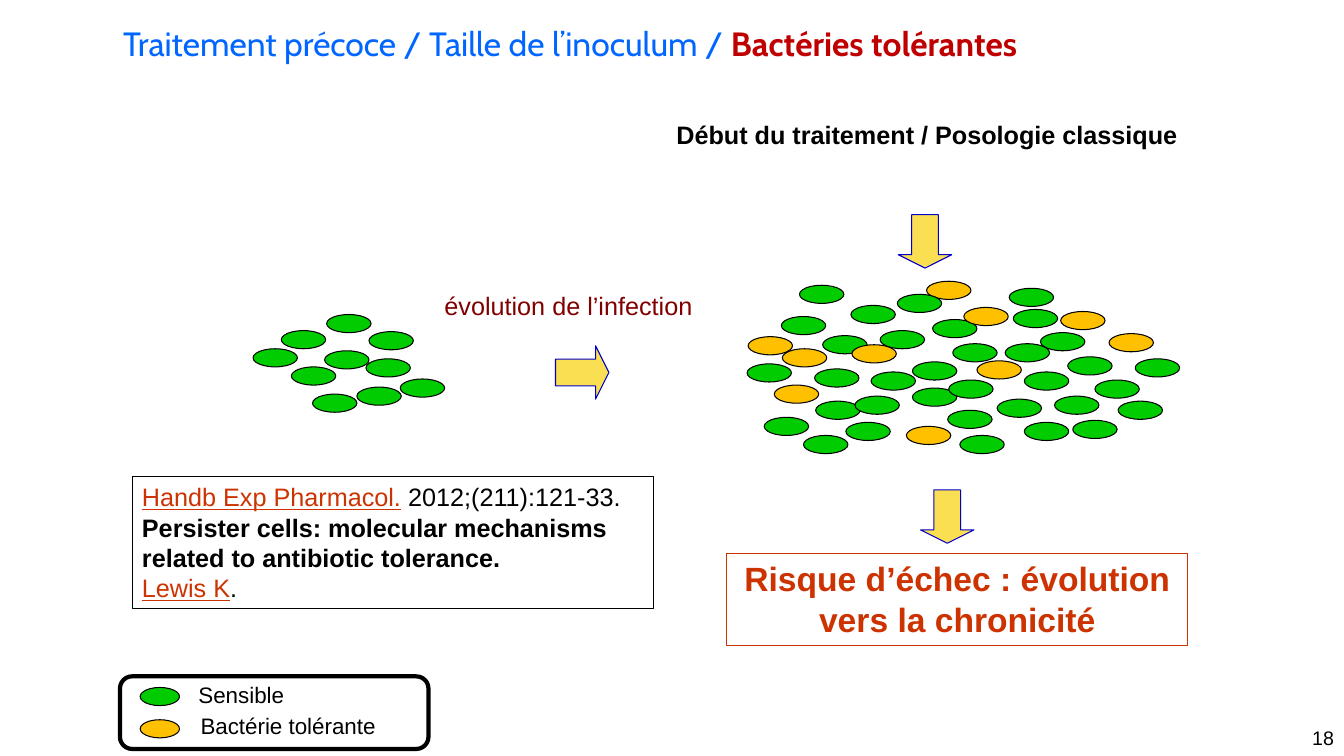
"""Slide on early treatment, inoculum size and tolerant bacteria."""
import pptx
import pptx.util
import pptx.dml.color
import pptx.enum.shapes
import pptx.enum.text

SCALE = 9144
BLACK, RED, MAROON = "000000", "CC3300", "800000"
SHAPES = pptx.enum.shapes.MSO_SHAPE
ALIGN = pptx.enum.text.PP_ALIGN
ANCHOR = pptx.enum.text.MSO_ANCHOR

S, T = "00CC00", "FFC000"
CELL_SIZE = (44, 18)
KEY_SIZE = (39, 18)
INOCULUM = [(251, 346), (322, 348), (289, 364), (310, 391), (324, 312),
            (366, 329), (363, 356), (354, 384), (397, 376), (279, 328)]
COLONY = [
    (844, 303, S), (776, 346, T), (808, 366, S), (809, 398, S), (839, 419, S),
    (775, 314, S), (873, 328, S), (925, 317, S), (797, 432, S), (945, 341, S),
    (905, 385, S), (940, 407, S), (952, 432, S), (741, 361, S), (1005, 307, S),
    (1032, 330, S), (1059, 354, S), (989, 396, S), (1016, 419, S), (758, 414, S),
    (816, 333, S), (1064, 417, S), (1046, 393, S), (845, 342, T), (768, 382, T),
    (969, 358, T), (1086, 377, S), (742, 334, T), (1052, 309, T), (919, 279, T),
    (864, 369, S), (1001, 286, S), (793, 283, S), (1100, 331, T), (1126, 356, S),
    (941, 377, S), (997, 341, S), (890, 292, S), (848, 393, S), (905, 359, S),
    (899, 423, T), (956, 305, T), (1016, 369, S), (1109, 398, S),
]
ARROWS = [(551, 343, 270), (891, 213, 0), (913, 486, 0)]
KEY = [("Sensible", S, (139, 682), (187, 671, 106, 37)),
       ("Bactérie tolérante", T, (139, 714), (189, 702, 202, 37))]

# Runs: text, colour, bold, underlined
TITLE = [[("Traitement précoce / Taille de l’inoculum / ", "0066FF", False, False),
          ("Bactéries tolérantes", "C00000", True, False)]]
START = [[("Début du traitement / Posologie classique", BLACK, True, False)]]
GROWTH = [[("évolution de l’infection", MAROON, False, False)]]
RISK = [[("Risque d’échec : évolution vers la chronicité", RED, True, False)]]
REFERENCE = [
    [("Handb Exp Pharmacol.", RED, False, True),
     (" 2012;(211):121-33.", BLACK, False, False)],
    [("Persister cells: molecular mechanisms related to antibiotic tolerance.",
      BLACK, True, False)],
    [("Lewis K", RED, False, True), (".", BLACK, False, False)],
]
NUMBER = [[("18", BLACK, False, False)]]


def emu(*lengths):
    return [pptx.util.Emu(n * SCALE) for n in lengths]


def rgb(value):
    return pptx.dml.color.RGBColor.from_string(value)


def write(sp, paragraphs, size, align=ALIGN.LEFT, font="Arial",
          anchor=ANCHOR.TOP, wrap=True):
    tf = sp.text_frame
    tf.auto_size = pptx.enum.text.MSO_AUTO_SIZE.NONE
    tf.word_wrap = wrap
    tf.vertical_anchor = anchor
    for i, runs in enumerate(paragraphs):
        p = tf.add_paragraph() if i else tf.paragraphs[0]
        p.alignment = align
        for text, colour, bold, underlined in runs:
            r = p.add_run()
            r.text = text
            r.font.name = font
            r.font.size = pptx.util.Pt(size)
            r.font.bold = bold
            r.font.underline = underlined
            r.font.color.rgb = rgb(colour)


def add_text(s, box, paragraphs, size, **options):
    write(s.shapes.add_textbox(*emu(*box)), paragraphs, size, **options)


def add_shape(s, kind, box, fill, line, width=0.75):
    sp = s.shapes.add_shape(kind, *emu(*box))
    sp.shadow.inherit = False
    if fill:
        sp.fill.solid()
        sp.fill.fore_color.rgb = rgb(fill)
    else:
        sp.fill.background()
    sp.line.color.rgb = rgb(line)
    sp.line.width = pptx.util.Pt(width)
    return sp


def main():
    prs = pptx.Presentation()
    prs.slide_width, prs.slide_height = emu(1333, 750)
    s = prs.slides.add_slide(prs.slide_layouts[5])

    title = s.shapes.title
    title.left, title.top, title.width, title.height = emu(112, 7, 1117, 71)
    write(title, TITLE, 24, font="Cabin", anchor=ANCHOR.MIDDLE)

    for x, y, colour in [(x, y, S) for x, y in INOCULUM] + COLONY:
        add_shape(s, SHAPES.OVAL, (x, y, *CELL_SIZE), colour, BLACK)

    for x, y, angle in ARROWS:
        arrow = add_shape(s, SHAPES.DOWN_ARROW, (x, y, 53, 53), "FBDF53", "0000CC")
        arrow.adjustments[0], arrow.adjustments[1] = 0.5, 0.25
        arrow.rotation = angle

    add_text(s, (648, 113, 543, 40), START, 18, align=ALIGN.CENTER)
    add_text(s, (431, 283, 303, 40), GROWTH, 18)

    for label, colour, place, box in KEY:
        add_shape(s, SHAPES.OVAL, (*place, *KEY_SIZE), colour, BLACK)
        add_text(s, box, [[(label, BLACK, False, False)]], 16, wrap=False)
    add_shape(s, SHAPES.ROUNDED_RECTANGLE, (119, 671, 306, 72), None, BLACK, 3)

    risk = add_shape(s, SHAPES.RECTANGLE, (721, 549, 457, 91), None, RED)
    write(risk, RISK, 24, align=ALIGN.CENTER)
    reference = add_shape(s, SHAPES.RECTANGLE, (131, 473, 517, 131), None, BLACK)
    write(reference, REFERENCE, 18)

    add_text(s, (989, 715, 344, 35), NUMBER, 14, align=ALIGN.RIGHT)
    prs.save("out.pptx")


if __name__ == "__main__":
    main()
